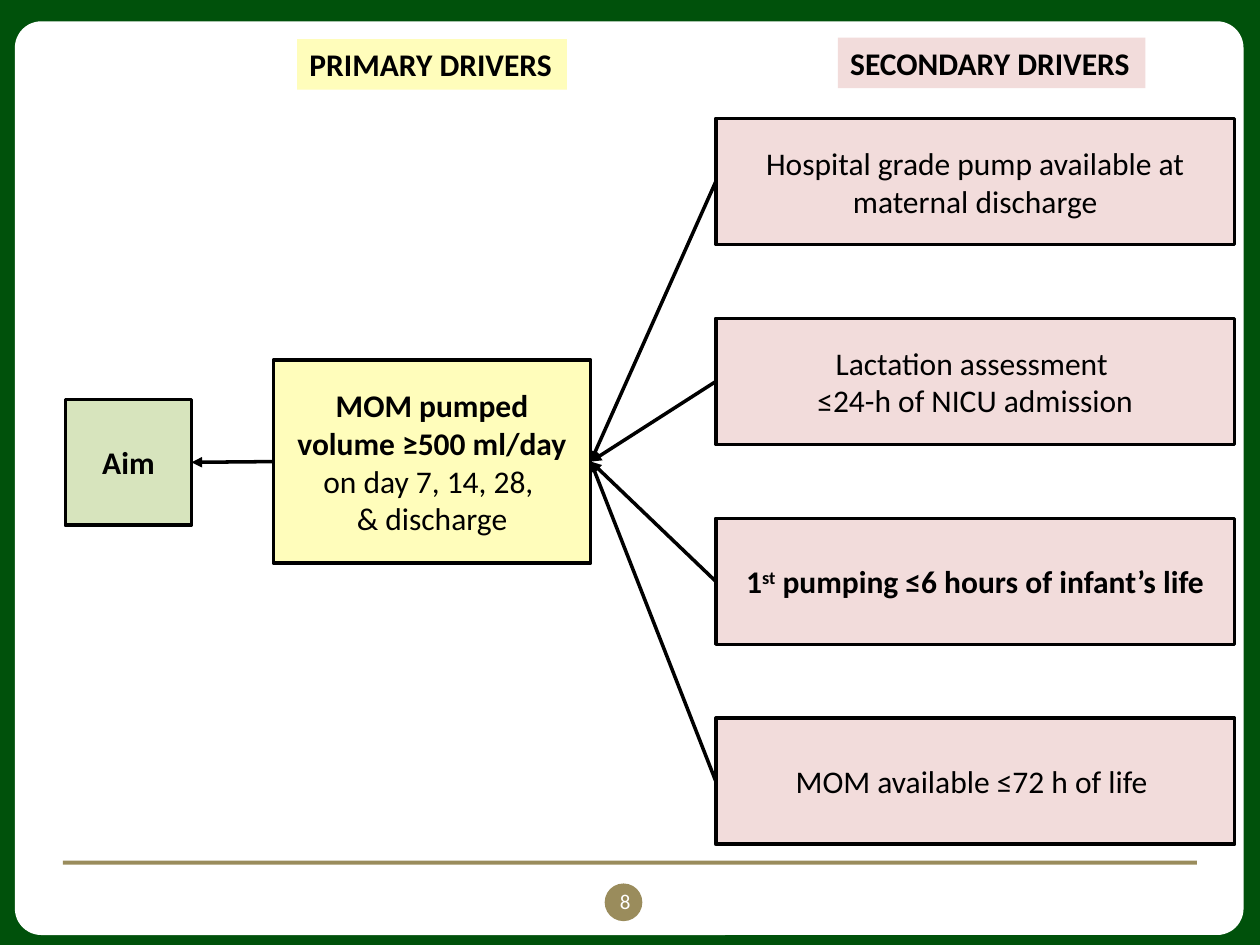
from dataclasses import dataclass

from lxml import etree
from pptx import Presentation
from pptx import util as u
from pptx.dml.color import RGBColor
from pptx.enum import shapes, text
from pptx.oxml import ns


@dataclass(frozen=True)
class Theme:
    font: str = "Calibri"
    body: int = 18
    small: int = 12
    line: int = 2
    frame: str = "00510B"
    white: str = "FFFFFF"
    black: str = "000000"
    gold: str = "9A8C5C"
    aim: str = "D7E4BD"
    primary: str = "FFFDBB"
    secondary: str = "F2DCDB"


THEME = Theme()
KIND = shapes.MSO_SHAPE
LEFT_SITE, RIGHT_SITE = 1, 3
SECONDARY_TOP, SECONDARY_STEP = 2.39, 4.03

SECONDARY_DRIVERS = [
    [[("Hospital grade pump available at maternal discharge", "")]],
    [[("Lactation assessment ", "")], [("≤24-h of NICU admission", "")]],
    [[("1", "b"), ("st", "b^"), (" pumping ≤6 hours of infant’s life", "b")]],
    [[("MOM available ≤72 h of life ", "")]],
]


def color(value):
    return RGBColor.from_string(value)


def add_block(slide, kind, place, fill, outlined=False):
    block = slide.shapes.add_shape(kind, *map(u.Cm, place))
    block.shadow.inherit = False
    block.fill.solid()
    block.fill.fore_color.rgb = color(fill)
    if outlined:
        block.line.color.rgb = color(THEME.black)
        block.line.width = u.Pt(THEME.line)
    else:
        block.line.fill.background()
    return block


def style_run(run, size, ink, marks=""):
    run.font.name = THEME.font
    run.font.size = u.Pt(size)
    run.font.color.rgb = color(ink)
    run.font.bold = "b" in marks
    if "^" in marks:
        run.font._element.set("baseline", "30000")


def write(frame, paragraphs, align=text.PP_ALIGN.CENTER, size=THEME.body, ink=THEME.black):
    for index, pieces in enumerate(paragraphs):
        paragraph = frame.add_paragraph() if index else frame.paragraphs[0]
        paragraph.alignment = align
        for words, marks in pieces:
            run = paragraph.add_run()
            run.text = words
            style_run(run, size, ink, marks)


def add_driver(slide, place, fill, paragraphs):
    driver = add_block(slide, KIND.RECTANGLE, place, fill, outlined=True)
    driver.text_frame.vertical_anchor = text.MSO_ANCHOR.MIDDLE
    write(driver.text_frame, paragraphs)
    return driver


def add_heading(slide, place, fill, title):
    heading = slide.shapes.add_textbox(*map(u.Cm, place))
    heading.fill.solid()
    heading.fill.fore_color.rgb = color(fill)
    heading.text_frame.word_wrap = False
    heading.text_frame.auto_size = text.MSO_AUTO_SIZE.SHAPE_TO_FIT_TEXT
    write(heading.text_frame, [[(title, "b")]], text.PP_ALIGN.LEFT)


def add_arrow(slide, cause, effect):
    arrow = slide.shapes.add_connector(shapes.MSO_CONNECTOR.STRAIGHT, 0, 0, 0, 0)
    arrow.begin_connect(cause, LEFT_SITE)
    arrow.end_connect(effect, RIGHT_SITE)
    arrow.line.color.rgb = color(THEME.black)
    arrow.line.width = u.Pt(THEME.line)
    etree.SubElement(arrow.line._get_or_add_ln(), ns.qn("a:tailEnd"), type="triangle")
    etree.SubElement(arrow._element.spPr, ns.qn("a:effectLst"))


def add_backdrop(slide):
    slide.background.fill.solid()
    slide.background.fill.fore_color.rgb = color(THEME.frame)
    panel = add_block(slide, KIND.ROUNDED_RECTANGLE, (0.3, 0.43, 24.77, 18.42), THEME.white)
    panel.adjustments[0] = 0.029
    add_block(slide, KIND.OVAL, (12.19, 17.81, 0.76, 0.76), THEME.gold)
    add_block(slide, KIND.RECTANGLE, (1.27, 17.35, 22.86, 0.08), THEME.gold)
    page_number = slide.shapes.add_textbox(*map(u.Cm, (12.07, 17.78, 1.07, 0.89)))
    page_number.text_frame.word_wrap = True
    write(page_number.text_frame, [[("8", "")]], size=THEME.small, ink=THEME.white)


def main():
    deck = Presentation()
    deck.slide_width, deck.slide_height = u.Cm(25.4), u.Cm(19.05)
    slide = deck.slides.add_slide(deck.slide_layouts[6])
    add_backdrop(slide)

    aim = add_driver(slide, (1.32, 8.05, 2.54, 2.54), THEME.aim, [[("Aim", "b")]])
    primary = add_driver(slide, (5.51, 7.26, 6.4, 4.09), THEME.primary, [
        [("MOM pumped volume ≥500 ml/day ", "b"), ("on day 7, 14, 28, ", "")],
        [("& discharge", "")],
    ])
    secondary = [
        add_driver(slide, (14.43, SECONDARY_TOP + row * SECONDARY_STEP, 10.46, 2.54),
                   THEME.secondary, paragraphs)
        for row, paragraphs in enumerate(SECONDARY_DRIVERS)
    ]

    add_heading(slide, (5.99, 0.79, 5.44, 1.02), THEME.primary, "PRIMARY DRIVERS")
    add_heading(slide, (16.89, 0.76, 6.2, 1.02), THEME.secondary, "SECONDARY DRIVERS")

    for driver in secondary:
        add_arrow(slide, driver, primary)
    add_arrow(slide, primary, aim)
    deck.save("out.pptx")


if __name__ == "__main__":
    main()
